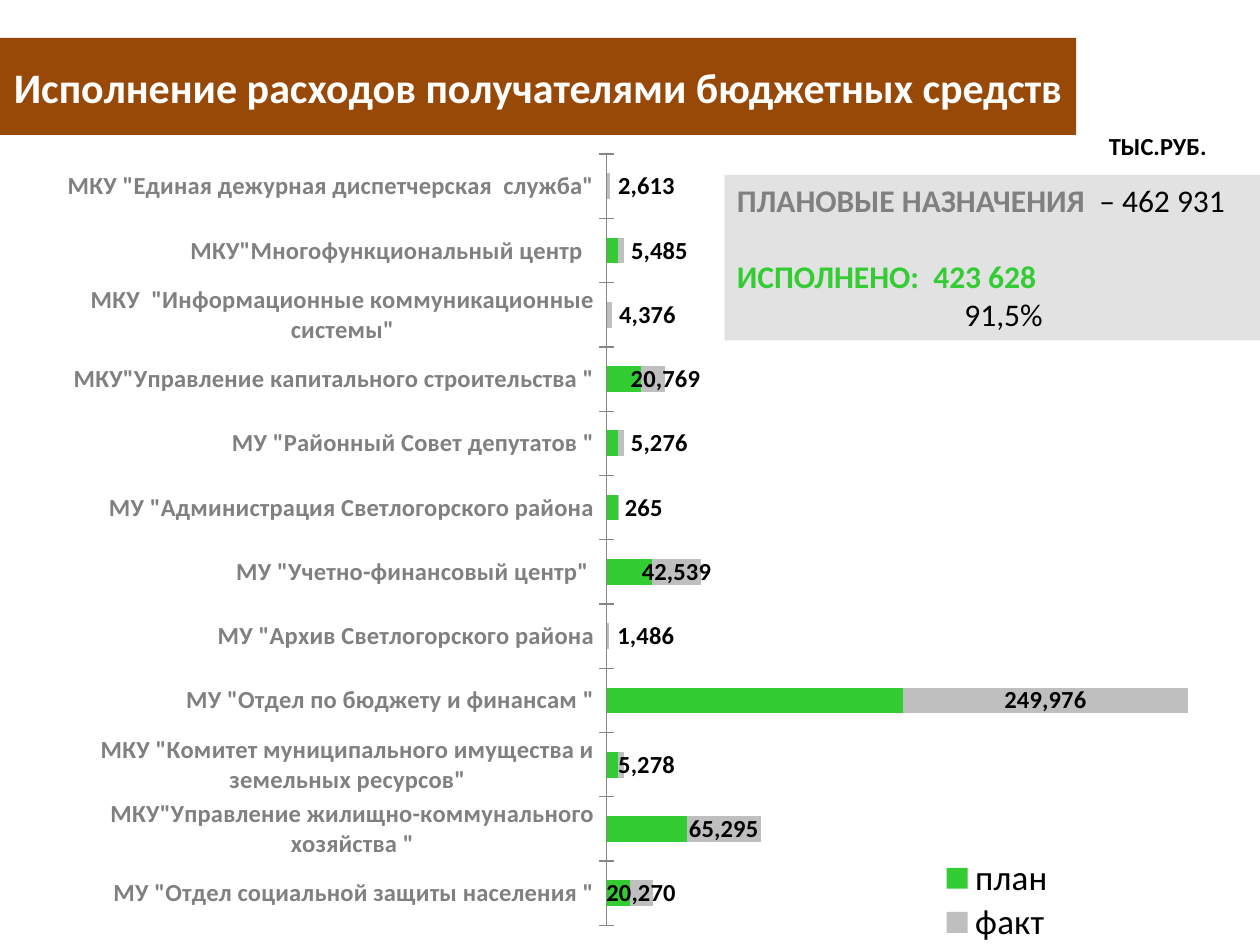
import pptx
import pptx.chart.data
import pptx.dml.color
import pptx.enum.chart
import pptx.enum.shapes
import pptx.enum.text
import pptx.oxml
import pptx.oxml.ns
import pptx.util

Pt = pptx.util.Pt
qn = pptx.oxml.ns.qn
CHART_NS = "http://schemas.openxmlformats.org/drawingml/2006/chart"
COLORS = {
    "brown": "984807", "white": "FFFFFF", "black": "000000", "gray": "808080",
    "green": "33CC33", "silver": "BFBFBF", "panel": "D9D9D9", "axis": "868686",
}

# Recipient, plan, fact (bottom to top)
ROWS = [
    ('МУ "Отдел социальной защиты населения "', 20000, 20270),
    ('МКУ"Управление жилищно-коммунального хозяйства "', 70000, 65295),
    ('МКУ "Комитет муниципального имущества и земельных ресурсов"', 10000, 5278),
    ('МУ "Отдел по бюджету и финансам "', 260000, 249976),
    ('МУ "Архив Светлогорского района', 0, 1486),
    ('МУ "Учетно-финансовый центр" ', 40000, 42539),
    ('МУ "Администрация Светлогорского района', 10000, 265),
    ('МУ "Районный Совет депутатов "', 10000, 5276),
    ('МКУ"Управление капитального строительства "', 30000, 20769),
    ('МКУ  "Информационные коммуникационные системы"', 0, 4376),
    ('МКУ"Многофункциональный центр  ', 10000, 5485),
    ('МКУ "Единая дежурная диспетчерская  служба"', 0, 2613),
]
# Label shifts by row, as fractions of the chart width
LABEL_SHIFTS = {2: 0.02, 4: 0.03, 6: 0.02, 7: 0.03, 8: 0.01, 9: 0.03, 10: 0.03, 11: 0.03}


def rgb(name):
    return pptx.dml.color.RGBColor.from_string(COLORS[name])


def manual_layout(**values):
    tags = "".join(f'<c:{tag} val="{val}"/>' for tag, val in values.items())
    return pptx.oxml.parse_xml(
        f'<c:layout xmlns:c="{CHART_NS}"><c:manualLayout>{tags}</c:manualLayout></c:layout>')


class Deck:
    font = "Calibri"

    def __init__(self, width, height):
        self.prs = pptx.Presentation()
        self.prs.slide_width, self.prs.slide_height = Pt(width), Pt(height)
        self.s = self.prs.slides.add_slide(self.prs.slide_layouts[6])

    def style(self, font, size, color="black", bold=False):
        font.name, font.size, font.bold = self.font, Pt(size), bold
        font.color.rgb = rgb(color)

    def add_runs(self, p, runs, size):
        for text, color, bold in runs:
            r = p.add_run()
            r.text = text
            self.style(r.font, size, color, bold)

    def box(self, x, y, w, h, fill, alpha=None):
        sp = self.s.shapes.add_shape(
            pptx.enum.shapes.MSO_SHAPE.RECTANGLE, Pt(x), Pt(y), Pt(w), Pt(h))
        sp.shadow.inherit = False
        sp.line.fill.background()
        sp.fill.solid()
        sp.fill.fore_color.rgb = rgb(fill)
        if alpha:
            clr = sp._element.spPr.find(".//" + qn("a:srgbClr"))
            clr.append(pptx.oxml.parse_xml(
                '<a:alpha xmlns:a="http://schemas.openxmlformats.org/drawingml/2006/main" '
                f'val="{alpha * 1000}"/>'))
        return sp

    def label(self, x, y, w, h, text, size):
        sp = self.s.shapes.add_textbox(Pt(x), Pt(y), Pt(w), Pt(h))
        sp.text_frame.word_wrap = True
        self.add_runs(sp.text_frame.paragraphs[0], [(text, "black", True)], size)

    def chart(self, x, y, w, h, rows):
        data = pptx.chart.data.CategoryChartData(number_format="#,##0")
        names, plan, fact = zip(*rows)
        data.categories = names
        data.add_series("план", plan)
        data.add_series("факт", fact)
        chart = self.s.shapes.add_chart(
            pptx.enum.chart.XL_CHART_TYPE.BAR_STACKED,
            Pt(x), Pt(y), Pt(w), Pt(h), data).chart
        chart.has_title = False
        self.style(chart.font, 12)
        plot = chart.plots[0]
        plot.overlap, plot.gap_width, plot.vary_by_categories = 100, 150, False
        for series, color in zip(plot.series, ("green", "silver")):
            series.format.fill.solid()
            series.format.fill.fore_color.rgb = rgb(color)

        # Axes
        cat, val = chart.category_axis, chart.value_axis
        self.style(cat.tick_labels.font, 14, "gray", True)
        cat.major_tick_mark = pptx.enum.chart.XL_TICK_MARK.CROSS
        cat.format.line.color.rgb = rgb("axis")
        val.minimum_scale, val.maximum_scale = 0, 600000
        val.has_major_gridlines = False
        val.visible = False

        # Plot area
        area = chart._chartSpace.chart.plotArea
        for old in area.findall(qn("c:layout")):
            area.remove(old)
        area.insert(0, manual_layout(layoutTarget="inner", xMode="edge", yMode="edge",
                                     x=0.464, y=0.024, w=0.536, h=0.952))

        # Legend
        chart.has_legend = True
        legend = chart.legend
        legend.position = pptx.enum.chart.XL_LEGEND_POSITION.RIGHT
        legend.include_in_layout = False
        self.style(legend.font, 20)
        for old in legend._element.findall(qn("c:layout")):
            legend._element.remove(old)
        legend._element.find(qn("c:legendPos")).addnext(manual_layout(
            xMode="edge", yMode="edge", x=0.72, y=0.89, w=0.1, h=0.11))
        return chart

    def value_labels(self, series, shifts):
        labels = series.data_labels
        labels.show_value = True
        labels.number_format, labels.number_format_is_linked = "#,##0", False
        self.style(labels.font, 14, "black", True)
        for i in shifts:
            self.style(series.points[i].data_label.font, 14, "black", True)
        for idx in series._element.findall(".//" + qn("c:dLbl") + "/" + qn("c:idx")):
            idx.addnext(manual_layout(x=shifts[int(idx.get("val"))], y=0))


def main():
    deck = Deck(720, 540)

    # Title band
    sp = deck.box(0, 21.6, 615, 55.5, "brown")
    tf = sp.text_frame
    tf.word_wrap = False
    tf.vertical_anchor = pptx.enum.text.MSO_ANCHOR.MIDDLE
    p = tf.paragraphs[0]
    p.alignment = pptx.enum.text.PP_ALIGN.CENTER
    deck.add_runs(p, [("Исполнение расходов получателями бюджетных средств", "white", True)], 24)

    # Plan and fact by recipient
    chart = deck.chart(8.5, 77, 729, 463, ROWS)
    deck.value_labels(chart.plots[0].series[1], LABEL_SHIFTS)

    # Totals panel
    tf = deck.box(414, 100, 306, 94.5, "panel", alpha=74).text_frame
    tf.word_wrap = True
    tf.vertical_anchor = pptx.enum.text.MSO_ANCHOR.TOP
    lines = [
        [("ПЛАНОВЫЕ НАЗНАЧЕНИЯ  ", "gray", True), ("– 462 931", "black", False)],
        [("ИСПОЛНЕНО:  423 628", "green", True)],
        [("91,5%", "black", False)],
    ]
    for i, runs in enumerate(lines):
        p = tf.add_paragraph() if i else tf.paragraphs[0]
        p.alignment = pptx.enum.text.PP_ALIGN.LEFT
        deck.add_runs(p, runs, 18)
    tf.paragraphs[1].space_before = Pt(22)
    tf.paragraphs[2]._p.get_or_add_pPr().set("marL", str(Pt(130)))

    # Unit of measure
    deck.label(626.5, 71.5, 73.5, 24.5, "ТЫС.РУБ.", 14)

    deck.prs.save("out.pptx")


if __name__ == "__main__":
    main()
